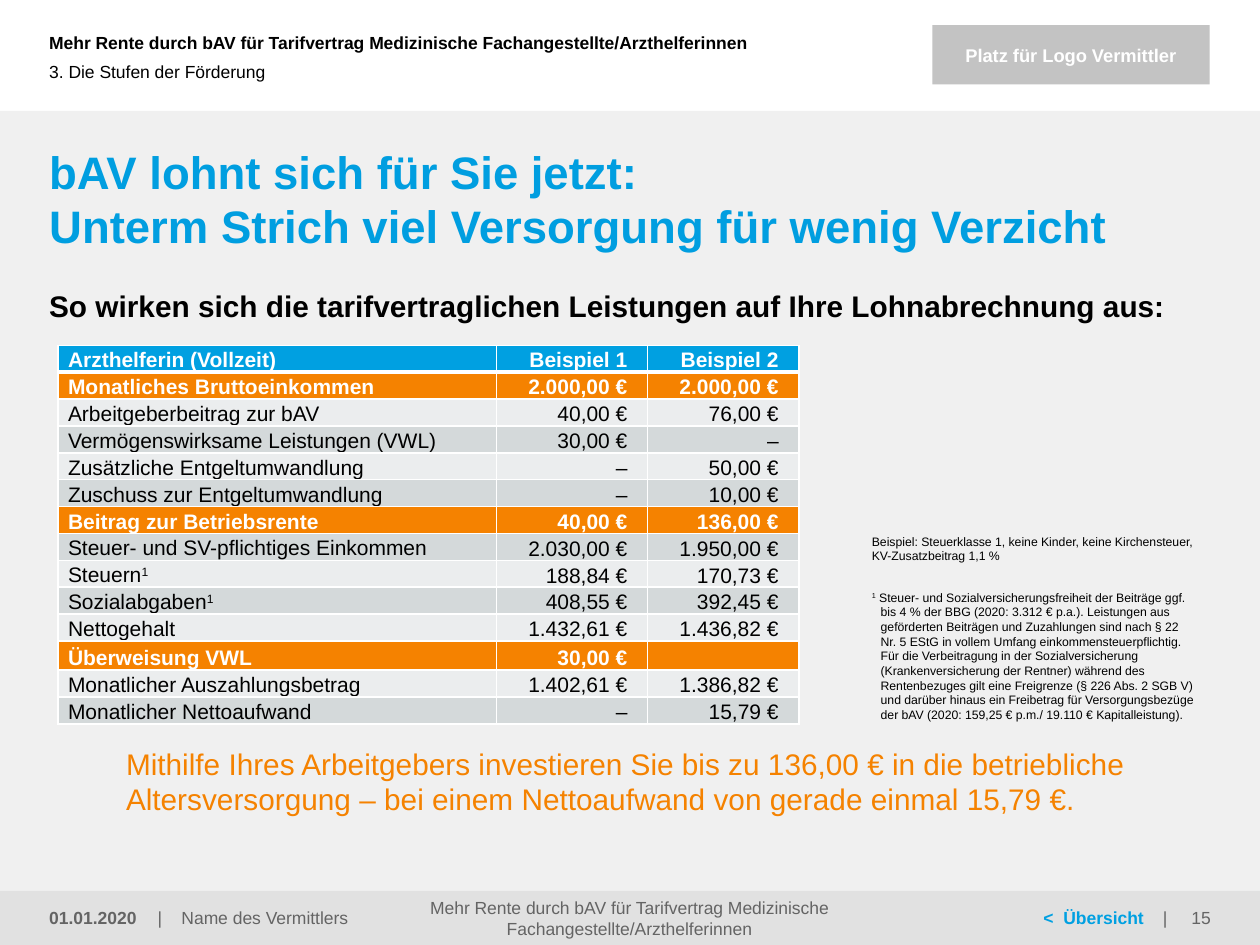
from lxml.etree import SubElement
from pptx import Presentation
from pptx.dml.color import RGBColor as RGB
from pptx.enum.shapes import MSO_SHAPE as SHAPE
from pptx.enum.text import MSO_ANCHOR as ANCHOR, PP_ALIGN as ALIGN
from pptx.oxml.ns import qn
from pptx.util import Inches, Pt

COLORS = {
    "blue": "00A0E1", "title": "009EE0", "orange": "F58200",
    "black": "000000", "white": "FFFFFF", "grey": "646464",
    "panel": "F0F0F0", "footer": "E1E1E1", "logo": "C3C3C3",
    "light": "EBEDEE", "dark": "D4D9DA",
}
TOPIC = "Mehr Rente durch bAV für Tarifvertrag Medizinische Fachangestellte/Arzthelferinnen"
HEADER = ("Arzthelferin (Vollzeit)", "Beispiel 1", "Beispiel 2")
ROWS = [
    ("Monatliches Bruttoeinkommen", "2.000,00 €", "2.000,00 €"),
    ("Arbeitgeberbeitrag zur bAV", "40,00 €", "76,00 €"),
    ("Vermögenswirksame Leistungen (VWL)", "30,00 €", "–"),
    ("Zusätzliche Entgeltumwandlung", "–", "50,00 €"),
    ("Zuschuss zur Entgeltumwandlung", "–", "10,00 €"),
    ("Beitrag zur Betriebsrente", "40,00 €", "136,00 €"),
    ("Steuer- und SV-pflichtiges Einkommen", "2.030,00 €", "1.950,00 €"),
    ("Steuern", "188,84 €", "170,73 €"),
    ("Sozialabgaben", "408,55 €", "392,45 €"),
    ("Nettogehalt", "1.432,61 €", "1.436,82 €"),
    ("Überweisung VWL", "30,00 €", ""),
    ("Monatlicher Auszahlungsbetrag", "1.402,61 €", "1.386,82 €"),
    ("Monatlicher Nettoaufwand", "–", "15,79 €"),
]
HIGHLIGHTS = {1, 6, 11}
FOOTNOTED = {"Steuern", "Sozialabgaben"}
FOOTNOTE = (
    " Steuer- und Sozialversicherungsfreiheit der Beiträge ggf. bis 4 % der BBG "
    "(2020: 3.312 € p.a.). Leistungen aus geförderten Beiträgen und Zuzahlungen sind "
    "nach § 22 Nr. 5 EStG in vollem Umfang einkommensteuerpflichtig. Für die "
    "Verbeitragung in der Sozialversicherung (Krankenversicherung der Rentner) während "
    "des Rentenbezuges gilt eine Freigrenze (§ 226 Abs. 2 SGB V) und darüber hinaus ein "
    "Freibetrag für Versorgungsbezüge der bAV (2020: 159,25 € p.m./ 19.110 € "
    "Kapitalleistung)."
)


class Deck:
    font = "Arial"
    columns, rows = 100, 75

    def __init__(self):
        self.prs = Presentation()
        self.prs.slide_width, self.prs.slide_height = Inches(10), Inches(7.5)
        self.s = self.prs.slides.add_slide(self.prs.slide_layouts[6])

    def place(self, left, top, width, height):
        x = self.prs.slide_width / self.columns
        y = self.prs.slide_height / self.rows
        return [round(v) for v in (left * x, top * y, width * x, height * y)]

    def run(self, p, text, size, color="black", bold=False, raised=False):
        r = p.add_run()
        r.text = text
        f = r.font
        f.name, f.size, f.bold = self.font, Pt(size), bold
        f.color.rgb = RGB.from_string(COLORS[color])
        if raised:
            f._element.set("baseline", "30000")

    def insets(self, target, left, top, right, bottom):
        target.margin_left, target.margin_top = Inches(left), Inches(top)
        target.margin_right, target.margin_bottom = Inches(right), Inches(bottom)

    def rect(self, at, color):
        sp = self.s.shapes.add_shape(SHAPE.RECTANGLE, *self.place(*at))
        sp.shadow.inherit = False
        sp.fill.solid()
        sp.fill.fore_color.rgb = RGB.from_string(COLORS[color])
        sp.line.fill.background()
        return sp

    def text(self, at, lines, size, color="black", bold=False, align=ALIGN.LEFT,
             anchor=ANCHOR.MIDDLE, insets=(0, 0, 0, 0), tabs=()):
        tf = self.s.shapes.add_textbox(*self.place(*at)).text_frame
        tf.word_wrap = True
        tf.vertical_anchor = anchor
        self.insets(tf, *insets)
        p = tf.paragraphs[0]
        p.alignment = align
        if tabs:
            tab_list = SubElement(p._p.get_or_add_pPr(), qn("a:tabLst"))
            for tab in tabs:
                SubElement(tab_list, qn("a:tab"), pos=str(Inches(tab)), algn="l")
        for i, line in enumerate(lines):
            if i:
                p.add_line_break()
            self.run(p, line, size, color, bold)
        return p

    def borders(self, cell, widths):
        props = cell._tc.get_or_add_tcPr()
        for i, (side, width) in enumerate(widths.items()):
            line = SubElement(props, qn(f"a:ln{side}"), w=str(Pt(width)))
            fill = SubElement(line, qn("a:solidFill"))
            SubElement(fill, qn("a:srgbClr"), val=COLORS["white"])
            props.remove(line)
            props.insert(i, line)

    def cell(self, cell, row, col, text, fill, color, bold):
        cell.fill.solid()
        cell.fill.fore_color.rgb = RGB.from_string(COLORS[fill])
        cell.vertical_anchor = ANCHOR.BOTTOM
        self.insets(cell, 0.08, 0.03 if row and col else 0, 0.16 if col else 0.08, 0)
        self.borders(cell, {"L": 1, "R": 1, "T": 3 if row == 1 else 1,
                            "B": 1 if row else 3})
        p = cell.text_frame.paragraphs[0]
        p.alignment = ALIGN.RIGHT if col else ALIGN.LEFT
        if row and col:
            p.line_spacing = 0.89
        if text:
            self.run(p, text, 12, color, bold)
        else:
            SubElement(p._p, qn("a:endParaRPr"), sz="1200")
        if text in FOOTNOTED:
            self.run(p, "1", 12, color, bold, raised=True)

    def table(self, at, widths, rows):
        table = self.s.shapes.add_table(len(rows), len(widths), *self.place(*at)).table
        for column, width in zip(table.columns, widths):
            column.width = self.place(0, 0, width, 0)[2]
        for i, values in enumerate(rows):
            strong = i == 0 or i in HIGHLIGHTS
            fill = "blue" if i == 0 else "orange" if strong else ("light", "dark")[i % 2]
            for j, value in enumerate(values):
                self.cell(table.cell(i, j), i, j, value, fill,
                          "white" if strong else "black", strong)


def main():
    deck = Deck()
    deck.rect((0, 8.8, 100, 66.2), "panel")
    deck.rect((0, 70.7, 100, 4.3), "footer")
    deck.text((12.5, 70.7, 24.2, 4.3), ["|\tName des Vermittlers"], 10, "grey", tabs=[0.19])
    p = deck.text((68.8, 70.7, 24.2, 4.3), ["<\tÜbersicht"], 10, "blue", True,
                  insets=(1.4, 0, 0, 0), tabs=[0.16, 0.95])
    deck.run(p, "\t|", 10, "grey")
    deck.text((0, 0, 69.8, 6.7), [TOPIC], 10, bold=True, insets=(0.39, 0.05, 0.1, 0.05))

    logo = deck.rect((74, 2, 22, 4.7), "logo").text_frame
    logo.vertical_anchor = ANCHOR.MIDDLE
    logo.paragraphs[0].alignment = ALIGN.CENTER
    deck.run(logo.paragraphs[0], "Platz für Logo Vermittler", 10.5, "white", True)

    deck.text((3.9, 11.4, 92.2, 5.5),
              ["bAV lohnt sich für Sie jetzt:",
               "Unterm Strich viel Versorgung für wenig Verzicht"],
              26, "title", True, anchor=ANCHOR.TOP)
    deck.text((3.9, 22.8, 92.2, 2.9),
              ["So wirken sich die tarifvertraglichen Leistungen auf Ihre Lohnabrechnung aus:"],
              17, bold=True, anchor=ANCHOR.TOP)
    deck.text((10, 59, 86.1, 6.8),
              ["Mithilfe Ihres Arbeitgebers investieren Sie bis zu 136,00 € in die betriebliche "
               "Altersversorgung – bei einem Nettoaufwand von gerade einmal 15,79 €."],
              17, "orange", insets=(0, 0, 0, 0.08))
    deck.text((0, 2.5, 71.5, 6.3), ["3. Die Stufen der Förderung"], 10, insets=(0.39, 0, 0, 0))
    deck.text((0, 70.7, 12.2, 4.3), ["01.01.2020"], 10, "grey", True,
              insets=(0.39, 0.05, 0.1, 0.05))
    deck.text((29.3, 70.7, 41.3, 4.3), [TOPIC], 10, "grey", align=ALIGN.CENTER)
    deck.text((90.6, 70.7, 9.4, 4.3), ["15"], 10, "grey", align=ALIGN.RIGHT,
              insets=(0.1, 0.05, 0.39, 0.05))

    deck.text((69.2, 41.8, 25.7, 2.9),
              ["Beispiel: Steuerklasse 1, keine Kinder, keine Kirchensteuer, "
               "KV-Zusatzbeitrag 1,1 %"],
              7, anchor=ANCHOR.BOTTOM, insets=(0, 0.05, 0, 0))
    p = deck.text((69.2, 45.1, 25.7, 12.2), [], 7, anchor=ANCHOR.BOTTOM,
                  insets=(0, 0.04, 0, 0))
    indent = Inches(0.07)
    p._p.get_or_add_pPr().set("marL", str(indent))
    p._p.get_or_add_pPr().set("indent", str(-indent))
    deck.run(p, "1", 7, raised=True)
    deck.run(p, FOOTNOTE, 7)

    deck.table((4.6, 27.4, 58.8, 29.9), (34.8, 12, 12), [HEADER, *ROWS])
    deck.prs.save("out.pptx")


if __name__ == "__main__":
    main()
